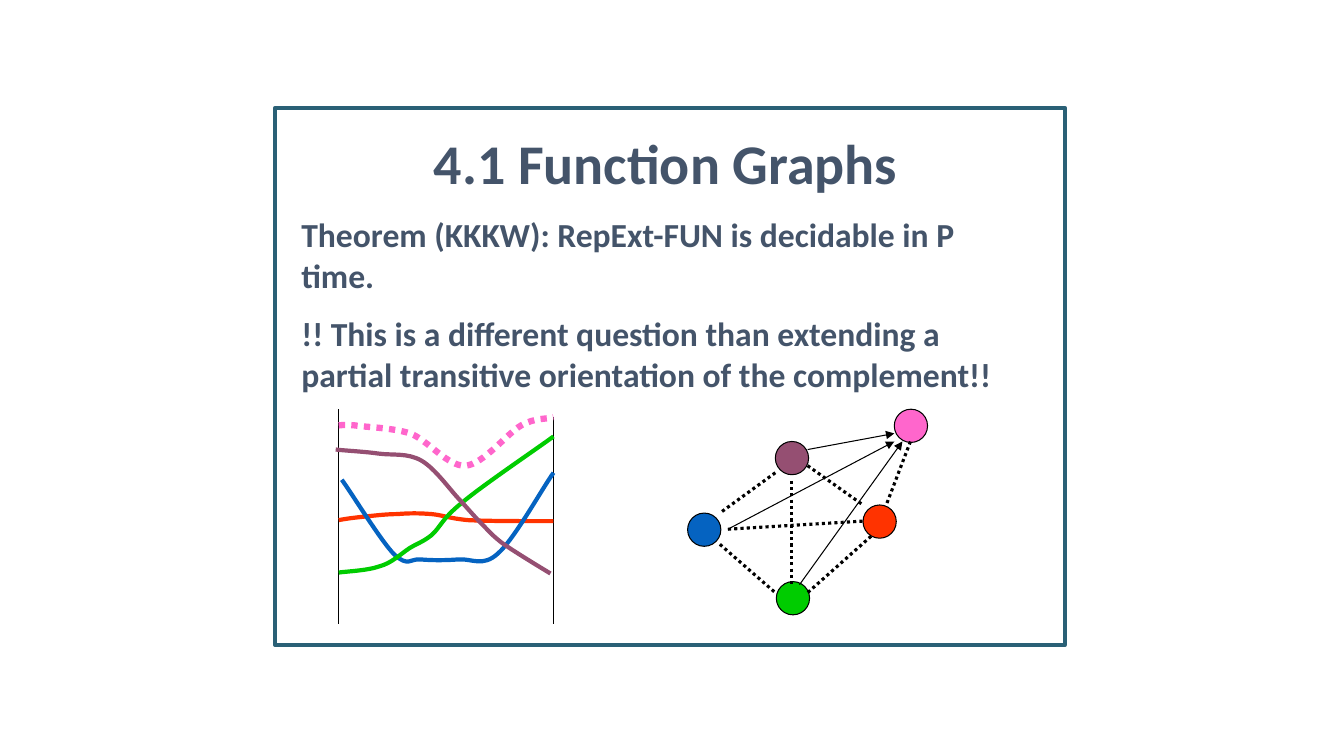
from lxml.etree import SubElement
from pptx import Presentation
from pptx.dml.color import RGBColor
from pptx.enum.dml import MSO_LINE
from pptx.enum.shapes import MSO_CONNECTOR, MSO_SHAPE
from pptx.enum.text import PP_ALIGN
from pptx.oxml.ns import qn
from pptx.util import Pt

SCALE = 9144
BLACK = "000000"
WHITE = "FFFFFF"
BLUE = "0563C1"
RED = "FF3300"
GREEN = "00CC00"
PLUM = "954F72"
PINK = "FF66CC"


def px(n):
    return n * SCALE


def tint(code):
    return RGBColor.from_string(code)


class Board:
    font = "Calibri"
    ink = "44546A"
    frame = "2A6076"

    def __init__(self, deck):
        self.slide = deck.slides.add_slide(deck.slide_layouts[6])
        self.shapes = self.slide.shapes

    def stroke(self, line, color, width, dots=False):
        line.color.rgb = tint(color)
        line.width = Pt(width)
        if dots:
            line.dash_style = MSO_LINE.ROUND_DOT

    def shape(self, kind, box, fill, color, width):
        item = self.shapes.add_shape(kind, *map(px, box))
        item.shadow.inherit = False
        item.fill.solid()
        item.fill.fore_color.rgb = tint(fill)
        self.stroke(item.line, color, width)

    def node(self, left, top, fill):
        self.shape(MSO_SHAPE.OVAL, (left, top, 33, 33), fill, BLACK, 0.75)

    def text(self, box, paras):
        frame = self.shapes.add_textbox(*map(px, box)).text_frame
        frame.word_wrap = True
        for i, (words, size, align, gap) in enumerate(paras):
            para = frame.add_paragraph() if i else frame.paragraphs[0]
            para.alignment = align
            para.space_before = Pt(gap)
            run = para.add_run()
            run.text = words
            run.font.name = self.font
            run.font.size = Pt(size)
            run.font.bold = True
            run.font.color.rgb = tint(self.ink)

    def link(self, ends, width=0.75, dots=False, arrow=False):
        item = self.shapes.add_connector(MSO_CONNECTOR.STRAIGHT, *map(px, ends))
        self.stroke(item.line, BLACK, width, dots)
        props = item._element.spPr
        if arrow:
            SubElement(props.find(qn("a:ln")), qn("a:tailEnd"), type="triangle")
        SubElement(props, qn("a:effectLst"))

    def curve(self, points, color, width=3, dots=False):
        pen = self.shapes.build_freeform(*points[0], scale=SCALE)
        pen.add_line_segments(points[1:], close=False)
        item = pen.convert_to_shape()
        item.shadow.inherit = False
        item.fill.background()
        self.stroke(item.line, color, width, dots)
        route = item._element.spPr.find(".//" + qn("a:path"))
        steps = route.findall(qn("a:lnTo"))
        for i in range(0, len(steps), 3):
            bend = SubElement(route, qn("a:cubicBezTo"))
            for step in steps[i:i + 3]:
                bend.append(step[0])
                route.remove(step)


CURVES = [
    (RED, [(336, 516), (341, 515), (348, 514), (357, 513), (367, 512),
           (382, 510), (394, 510), (406, 509), (416, 509), (428, 510),
           (439, 511), (444, 514), (464, 516), (484, 517), (513, 517),
           (549, 517)]),
    (BLUE, [(339, 476), (348, 488), (378, 537), (391, 550), (405, 563),
            (407, 554), (417, 555), (428, 556), (442, 556), (455, 555),
            (468, 554), (479, 563), (494, 549), (510, 535), (537, 486),
            (549, 469)]),
    (GREEN, [(336, 568), (343, 567), (365, 566), (376, 562), (388, 559),
             (397, 550), (406, 544), (414, 539), (419, 538), (428, 531),
             (437, 523), (438, 515), (458, 499), (478, 482), (530, 447),
             (549, 433)]),
    (PLUM, [(333, 446), (340, 447), (361, 448), (375, 450), (389, 452),
            (404, 449), (418, 457), (432, 465), (447, 487), (457, 497),
            (467, 508), (472, 514), (479, 521), (486, 528), (486, 529),
            (497, 538), (508, 546), (536, 563), (546, 569)]),
]
DASHED = [(336, 422), (338, 422), (340, 421), (352, 422), (364, 424),
          (388, 424), (407, 430), (425, 437), (444, 463), (462, 462),
          (480, 460), (503, 430), (517, 422), (531, 414), (543, 416),
          (549, 414)]
NODES = [(682, 509, BLUE), (856, 501, RED), (769, 438, PLUM),
         (770, 577, GREEN), (887, 406, PINK)]
AXES = [(336, 406, 336, 619), (549, 414, 549, 619)]
DOTTED = [(722, 525, 856, 517), (714, 540, 769, 588), (769, 469, 714, 509),
          (785, 477, 785, 580), (801, 462, 856, 501), (864, 532, 801, 588),
          (903, 438, 879, 501)]
ARROWS = [(801, 446, 887, 430), (722, 525, 887, 438), (793, 580, 895, 438)]


def main():
    deck = Presentation()
    deck.slide_width = px(1333)
    deck.slide_height = px(750)
    board = Board(deck)
    board.shape(MSO_SHAPE.RECTANGLE, (273, 107, 783, 533), WHITE, board.frame, 3)
    board.text((289, 123, 742, 340), [
        ("4.1 Function Graphs", 40, PP_ALIGN.CENTER, 0),
        ("Theorem (KKKW): RepExt-FUN is decidable in P time.",
         24, PP_ALIGN.LEFT, 13),
        ("!! This is a different question than extending a partial "
         "transitive orientation of the complement!!", 24, PP_ALIGN.LEFT, 13),
    ])
    for ends in AXES:
        board.link(ends)
    for color, points in CURVES:
        board.curve(points, color)
    for node in NODES:
        board.node(*node)
    for ends in DOTTED:
        board.link(ends, 2.25, dots=True)
    for ends in ARROWS:
        board.link(ends, arrow=True)
    board.curve(DASHED, PINK, 4.5, dots=True)
    deck.save("out.pptx")


if __name__ == "__main__":
    main()
